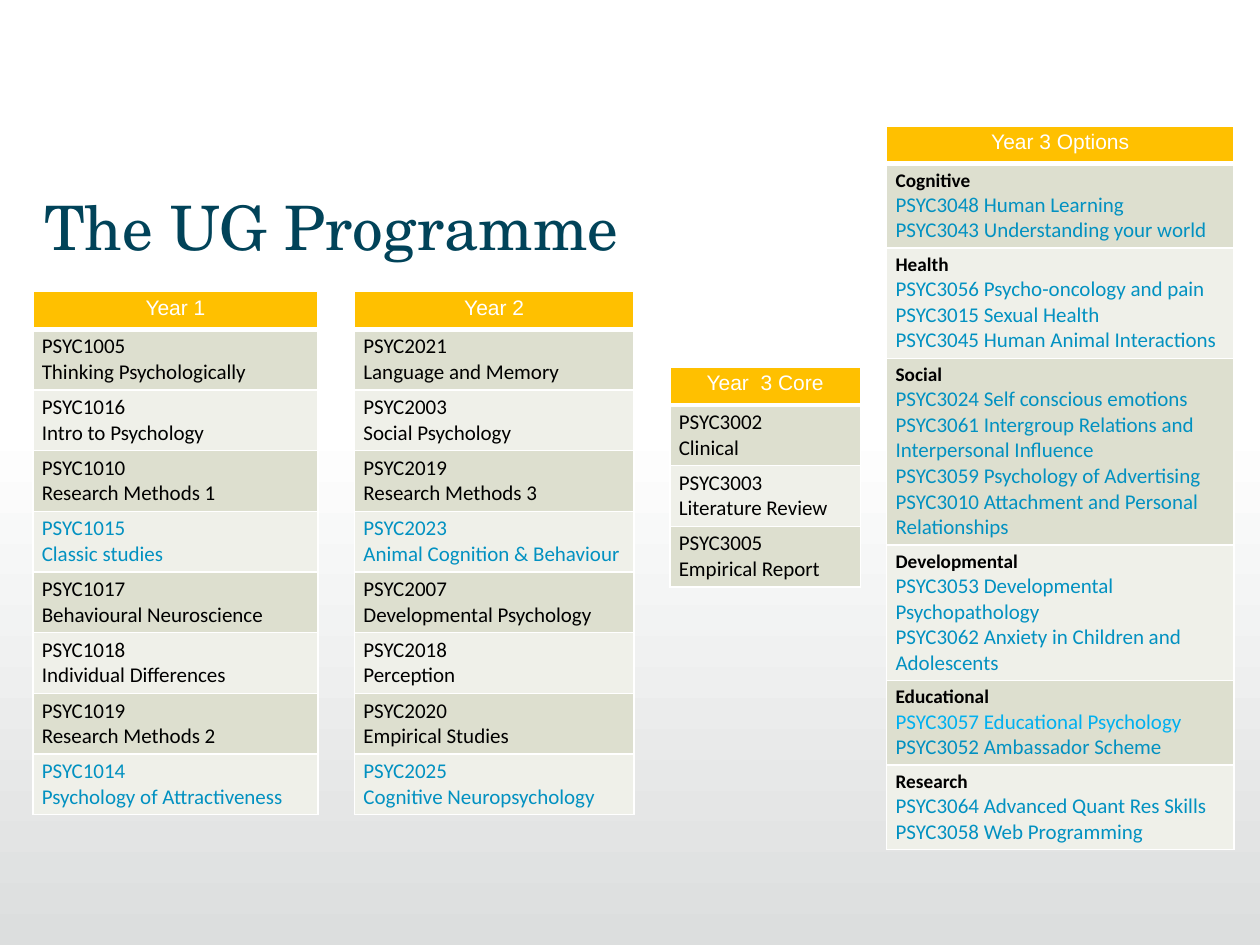
from dataclasses import dataclass

from lxml import etree
from pptx import Presentation
from pptx.dml.color import RGBColor
from pptx.enum import shapes, text
from pptx.oxml import ns
from pptx.util import Pt


@dataclass(frozen=True)
class Style:
    font: str
    size: float
    colour: str
    bold: bool = False


@dataclass(frozen=True)
class Theme:
    title = Style("TeX Gyre Schola", 35, "014359")
    header = Style("Arial", 12, "FFFFFF")
    core = Style("Calibri", 12, "000000")
    option = Style("Calibri", 12, "0291C1")
    highlight = Style("Calibri", 12, "00B0F0")
    area = Style("Calibri", 11, "000000", True)
    header_fill = "FFC000"
    bands = ("DDDFCF", "EFF0E9")
    border = "FFFFFF"
    backdrop = ("FFFFFF", "DCDEDE")


THEME = Theme()
HEADER_HEIGHT = 21.6
COURSE_HEIGHT = 34

YEAR_1 = [
    ("PSYC1005", "Thinking Psychologically"),
    ("PSYC1016", "Intro to Psychology"),
    ("PSYC1010", "Research Methods 1"),
    ("PSYC1015", "Classic studies"),
    ("PSYC1017", "Behavioural Neuroscience"),
    ("PSYC1018", "Individual Differences"),
    ("PSYC1019", "Research Methods 2"),
    ("PSYC1014", "Psychology of Attractiveness"),
]
YEAR_2 = [
    ("PSYC2021", "Language and Memory"),
    ("PSYC2003", "Social Psychology"),
    ("PSYC2019", "Research Methods 3"),
    ("PSYC2023", "Animal Cognition & Behaviour"),
    ("PSYC2007", "Developmental Psychology"),
    ("PSYC2018", "Perception"),
    ("PSYC2020", "Empirical Studies"),
    ("PSYC2025", "Cognitive Neuropsychology"),
]
YEAR_3_CORE = [
    ("PSYC3002", "Clinical"),
    ("PSYC3003", "Literature Review"),
    ("PSYC3005", "Empirical Report"),
]
YEAR_3_OPTIONS = [
    (46.8, "Cognitive", ["PSYC3048 Human Learning",
                         "PSYC3043 Understanding your world"]),
    (61.2, "Health", ["PSYC3056 Psycho-oncology and pain",
                      "PSYC3015 Sexual Health",
                      "PSYC3045 Human Animal Interactions"]),
    (104.4, "Social", ["PSYC3024 Self conscious emotions",
                       "PSYC3061 Intergroup Relations and Interpersonal Influence",
                       "PSYC3059 Psychology of Advertising",
                       "PSYC3010 Attachment and Personal Relationships"]),
    (75.6, "Developmental", ["PSYC3053 Developmental Psychopathology",
                             "PSYC3062 Anxiety in Children and Adolescents"]),
    (46.8, "Educational", ["PSYC3057 Educational Psychology",
                           "PSYC3052 Ambassador Scheme"]),
    (46.8, "Research", ["PSYC3064 Advanced Quant Res Skills",
                        "PSYC3058 Web Programming"]),
]
OPTIONAL_CODES = {"PSYC1015", "PSYC1014", "PSYC2023", "PSYC2025"}
HIGHLIGHTED = {"PSYC3057 Educational Psychology"}


def style_paragraph(paragraph, style):
    font = paragraph.font
    font.name, font.size, font.bold = style.font, Pt(style.size), style.bold
    font.color.rgb = RGBColor.from_string(style.colour)


def add_backdrop(slide, left, top, width, height):
    backdrop = slide.shapes.add_shape(
        shapes.MSO_SHAPE.RECTANGLE, Pt(left), Pt(top), Pt(width), Pt(height))
    backdrop.shadow.inherit = False
    backdrop.line.fill.background()
    backdrop.fill.gradient()
    backdrop.fill.gradient_angle = 270
    for position, (stop, colour) in enumerate(
            zip(backdrop.fill.gradient_stops, THEME.backdrop)):
        stop.position = position
        stop.color.rgb = RGBColor.from_string(colour)
    slide.shapes.title.element.addprevious(backdrop.element)


def place_title(slide, wording, left, top, width, height):
    title = slide.shapes.title
    title.left, title.top, title.width, title.height = map(
        Pt, (left, top, width, height))
    frame = title.text_frame
    frame.text = wording
    frame.word_wrap = True
    frame.auto_size = text.MSO_AUTO_SIZE.NONE
    frame.vertical_anchor = text.MSO_ANCHOR.TOP
    frame.margin_left, frame.margin_right = 0, Pt(7.2)
    frame.margin_top = frame.margin_bottom = Pt(3.6)
    frame.paragraphs[0].alignment = text.PP_ALIGN.LEFT
    style_paragraph(frame.paragraphs[0], THEME.title)


def set_borders(cell, bottom):
    properties = cell._tc.get_or_add_tcPr()
    for side, width in (("L", 1), ("R", 1), ("T", 1), ("B", bottom)):
        line = etree.SubElement(properties, ns.qn(f"a:ln{side}"), w=str(Pt(width)))
        fill = etree.SubElement(line, ns.qn("a:solidFill"))
        etree.SubElement(fill, ns.qn("a:srgbClr"), val=THEME.border)


def fill_cell(cell, lines, colour, bottom=1, alignment=text.PP_ALIGN.LEFT):
    cell.margin_left = cell.margin_right = Pt(5.1)
    cell.margin_top = cell.margin_bottom = Pt(2.7)
    set_borders(cell, bottom)
    cell.fill.solid()
    cell.fill.fore_color.rgb = RGBColor.from_string(colour)
    cell.text_frame.text = "\n".join(wording for wording, _ in lines)
    for paragraph, (_, style) in zip(cell.text_frame.paragraphs, lines):
        paragraph.alignment = alignment
        style_paragraph(paragraph, style)


def add_year_table(slide, heading, entries, left, top, width):
    heights = [HEADER_HEIGHT] + [height for height, _ in entries]
    table = slide.shapes.add_table(
        len(heights), 1, Pt(left), Pt(top), Pt(width), Pt(sum(heights))).table
    table.horz_banding = False
    for row, height in zip(table.rows, heights):
        row.height = Pt(height)
    fill_cell(table.cell(0, 0), [(heading, THEME.header)], THEME.header_fill,
              bottom=3, alignment=text.PP_ALIGN.CENTER)
    for index, (_, lines) in enumerate(entries):
        fill_cell(table.cell(index + 1, 0), lines, THEME.bands[index % 2])


def course_entries(courses):
    entries = []
    for code, name in courses:
        style = THEME.option if code in OPTIONAL_CODES else THEME.core
        entries.append((COURSE_HEIGHT, [(code, style), (name, style)]))
    return entries


def option_entries(areas):
    entries = []
    for height, area, courses in areas:
        lines = [(area, THEME.area)]
        for course in courses:
            style = THEME.highlight if course in HIGHLIGHTED else THEME.option
            lines.append((course, style))
        entries.append((height, lines))
    return entries


def main():
    deck = Presentation()
    deck.slide_width, deck.slide_height = Pt(720), Pt(540)
    slide = deck.slides.add_slide(deck.slide_layouts[5])
    add_backdrop(slide, -6.5, 240, 726.5, 300)
    place_title(slide, "The UG Programme", 25.2, 104.4, 669, 38.2)
    add_year_table(slide, "Year 1", course_entries(YEAR_1), 18.8, 166.6, 163)
    add_year_table(slide, "Year 2", course_entries(YEAR_2), 202.6, 166.6, 159.6)
    add_year_table(slide, "Year  3 Core", course_entries(YEAR_3_CORE), 382.8, 209.8, 108.9)
    add_year_table(slide, "Year 3 Options", option_entries(YEAR_3_OPTIONS), 506.7, 72, 198.4)
    deck.save("out.pptx")


if __name__ == "__main__":
    main()
